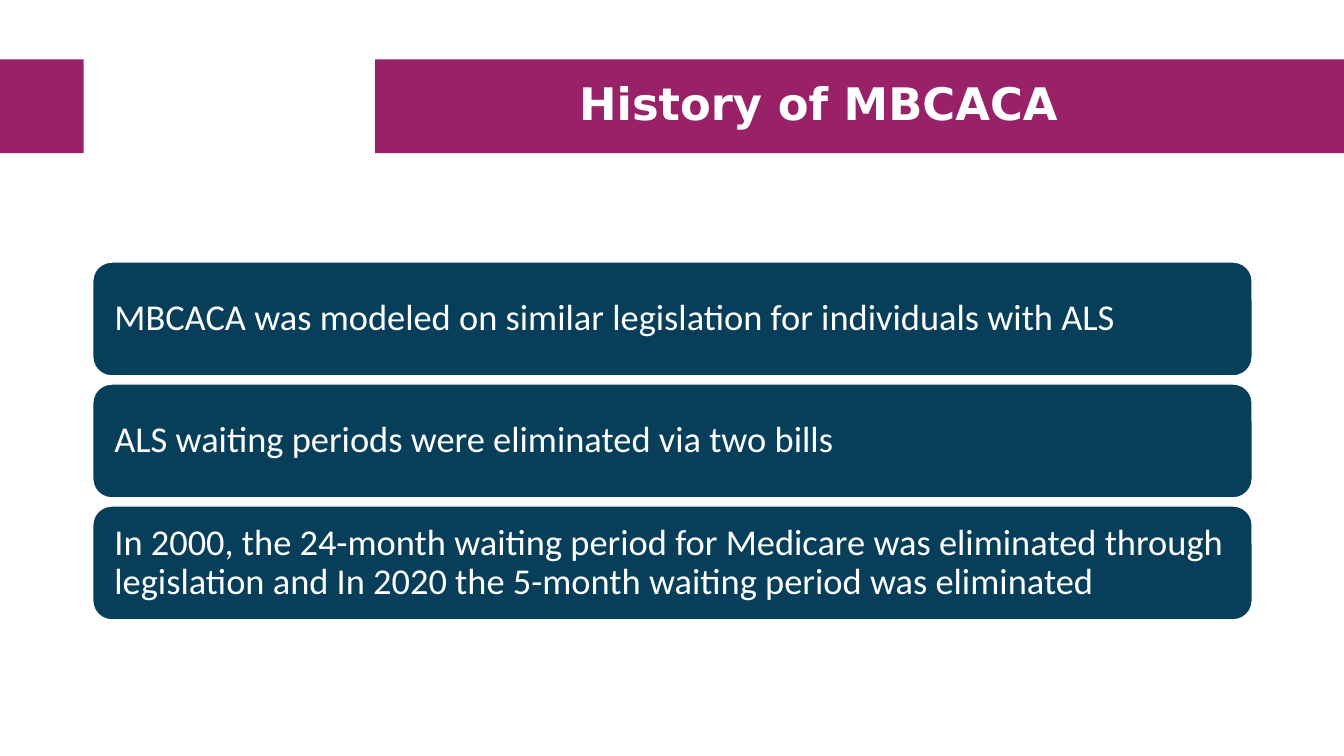
from dataclasses import dataclass

from pptx import Presentation
from pptx.dml.color import RGBColor
from pptx.enum.shapes import MSO_SHAPE
from pptx.enum.text import MSO_ANCHOR, PP_ALIGN
from pptx.shapes.autoshape import Shape
from pptx.slide import Slide
from pptx.util import Inches, Pt

COLORS = {"magenta": "982168", "navy": "073F5B", "white": "FFFFFF"}
CARD_TOP = 2.6
CARD_STEP = 1.21


@dataclass(frozen=True)
class Band:
    left: float
    width: float


@dataclass(frozen=True)
class TextStyle:
    font: str
    size: int
    bold: bool
    align: PP_ALIGN
    inset: float


BANDS = [Band(3.72, 9.61), Band(0, 0.83)]
TITLE_STYLE = TextStyle("DejaVu Sans", 32, True, PP_ALIGN.CENTER, 0.05)
CARD_STYLE = TextStyle("Calibri", 26, False, PP_ALIGN.LEFT, 0.16)
STATEMENTS = [
    "MBCACA was modeled on similar legislation for individuals with ALS",
    "ALS waiting periods were eliminated via two bills",
    "In 2000, the 24-month waiting period for Medicare was eliminated through "
    "legislation and In 2020 the 5-month waiting period was eliminated",
]


def color(name: str) -> RGBColor:
    return RGBColor.from_string(COLORS[name])


def write_text(box: Shape, text: str, style: TextStyle) -> None:
    frame = box.text_frame
    frame.word_wrap = True
    frame.vertical_anchor = MSO_ANCHOR.MIDDLE
    frame.margin_left = frame.margin_right = Inches(style.inset)
    frame.margin_top = frame.margin_bottom = Inches(style.inset)
    para = frame.paragraphs[0]
    para.alignment = style.align
    para.line_spacing = 0.9
    span = para.add_run()
    span.text = text
    span.font.name = style.font
    span.font.size = Pt(style.size)
    span.font.bold = style.bold
    span.font.color.rgb = color("white")


def add_panel(page: Slide, kind: MSO_SHAPE, left: float, top: float,
              width: float, height: float, fill: str) -> Shape:
    panel = page.shapes.add_shape(
        kind, Inches(left), Inches(top), Inches(width), Inches(height))
    panel.shadow.inherit = False
    panel.fill.solid()
    panel.fill.fore_color.rgb = color(fill)
    panel.line.fill.background()
    return panel


def add_card(page: Slide, top: float, text: str) -> None:
    card = add_panel(page, MSO_SHAPE.ROUNDED_RECTANGLE,
                     0.92, top, 11.5, 1.13, "navy")
    card.line.color.rgb = color("white")
    card.line.width = Pt(1)
    write_text(card, text, CARD_STYLE)


def main() -> None:
    deck = Presentation()
    deck.slide_width = Inches(13.33)
    deck.slide_height = Inches(7.5)
    page = deck.slides.add_slide(deck.slide_layouts[6])
    for band in BANDS:
        add_panel(page, MSO_SHAPE.RECTANGLE,
                  band.left, 0.59, band.width, 0.93, "magenta")
    title = page.shapes.add_textbox(
        Inches(3.92), Inches(0.68), Inches(8.4), Inches(0.75))
    write_text(title, "History of MBCACA", TITLE_STYLE)
    for index, statement in enumerate(STATEMENTS):
        add_card(page, CARD_TOP + index * CARD_STEP, statement)
    deck.save("out.pptx")


if __name__ == "__main__":
    main()
